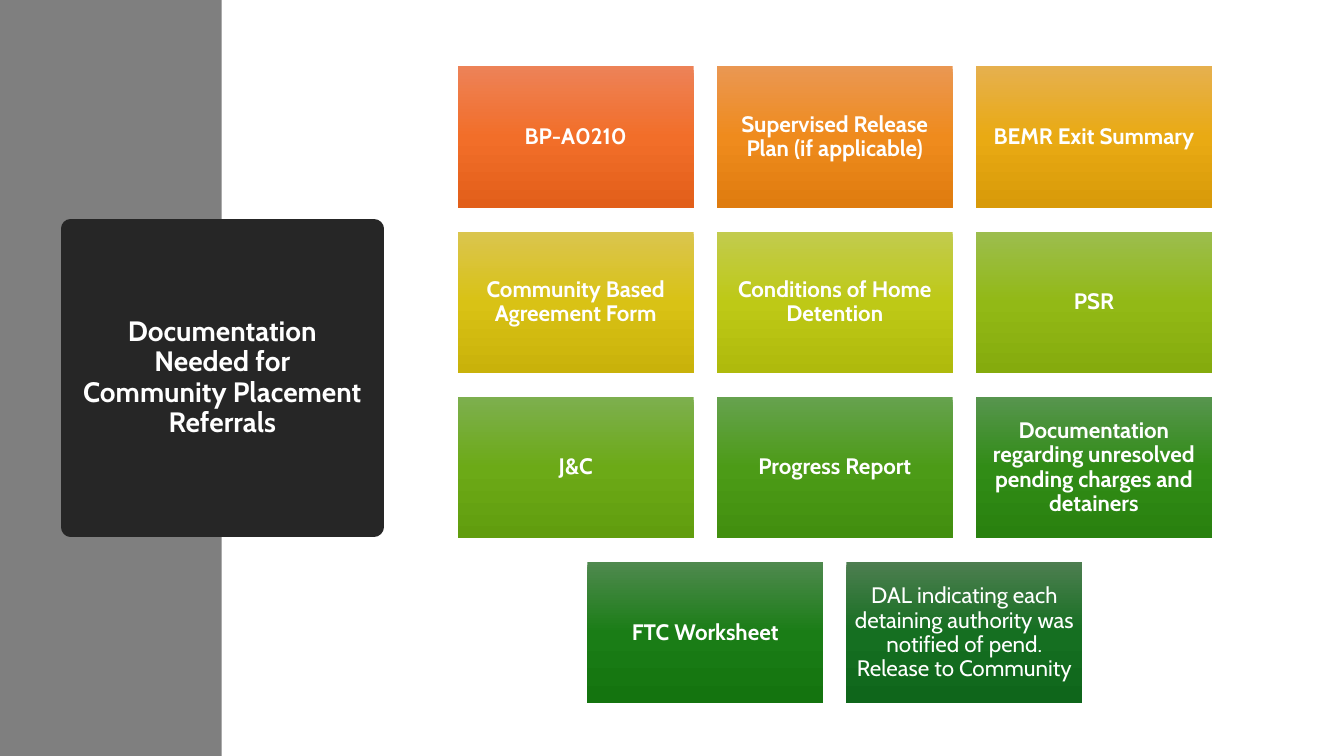
from copy import deepcopy

from pptx import Presentation
from pptx.dml.color import RGBColor
from pptx.enum.shapes import MSO_SHAPE
from pptx.enum.text import MSO_ANCHOR, PP_ALIGN
from pptx.oxml import parse_xml
from pptx.oxml.ns import nsdecls, qn
from pptx.util import Inches, Pt

COLORS = {"band": "7F7F7F", "title": "262626", "text": "FFFFFF"}
FONT = "Cabin"
COLUMNS = 3
TILE_WIDTH, TILE_HEIGHT = 2.34, 1.4
GRID_LEFT, GRID_TOP = 4.54, 0.66
COLUMN_STEP, ROW_STEP = 2.57, 1.64

DOCUMENTS = [
    ("BP-A0210", True, ("ED8257", "F26E29", "E25F1A")),
    ("Supervised Release Plan (if applicable)", True, ("EA9752", "EF8B1D", "DF7C0F")),
    ("BEMR Exit Summary", True, ("E6B04E", "E9AA13", "D89A09")),
    ("Community Based Agreement Form", True, ("DAC54E", "D9C215", "C9B20A")),
    ("Conditions of Home Detention", True, ("C2CB4E", "BEC916", "AFBA0C")),
    ("PSR", True, ("9CBD4E", "92B916", "85AB0D")),
    ("J&C", True, ("7DAF4E", "6CAA17", "619D0E")),
    ("Progress Report", True, ("66A24E", "4C9B17", "428F0F")),
    ("Documentation regarding unresolved pending charges and detainers", True,
     ("57954E", "318C16", "29810F")),
    ("FTC Worksheet", True, ("4F894E", "1A7D16", "14740F")),
    ("DAL indicating each detaining authority was notified of pend. Release to Community",
     False, ("4D7E50", "156F21", "0F661B")),
]


def add_box(left, top, width, height, color):
    box = page.shapes.add_shape(
        MSO_SHAPE.RECTANGLE, Inches(left), Inches(top), Inches(width), Inches(height))
    box.shadow.inherit = False
    box.fill.solid()
    box.fill.fore_color.rgb = RGBColor.from_string(color)
    box.line.fill.background()
    return box


def write_text(box, text, size, bold, inset):
    frame = box.text_frame
    frame.text = text
    frame.word_wrap = True
    frame.vertical_anchor = MSO_ANCHOR.MIDDLE
    frame.margin_left = frame.margin_right = Inches(inset)
    frame.margin_top = frame.margin_bottom = Inches(inset)
    para = frame.paragraphs[0]
    para.alignment = PP_ALIGN.CENTER
    para.line_spacing = 0.9
    font = para.runs[0].font
    font.name = FONT
    font.size = Pt(size)
    font.bold = bold
    font.color.rgb = RGBColor.from_string(COLORS["text"])


deck = Presentation()
deck.slide_width = Inches(13.33)
deck.slide_height = Inches(7.5)
page = deck.slides.add_slide(deck.slide_layouts[6])

add_box(0, 0, 2.2, 7.5, COLORS["band"])

title = add_box(0.7, 2.27, 3.01, 2.96, COLORS["title"])
title.line.color.rgb = RGBColor.from_string(COLORS["title"])
title.line.width = Pt(13.75)
title.line.fill._xPr.append(parse_xml(f"<a:round {nsdecls('a')}/>"))
write_text(title, "Documentation Needed for Community Placement Referrals", 20, True, 0.1)

for index, (text, bold, shades) in enumerate(DOCUMENTS):
    row, column = divmod(index, COLUMNS)
    tiles_in_row = min(COLUMNS, len(DOCUMENTS) - row * COLUMNS)
    indent = (COLUMNS - tiles_in_row) * COLUMN_STEP / 2
    tile = add_box(GRID_LEFT + indent + column * COLUMN_STEP, GRID_TOP + row * ROW_STEP,
                   TILE_WIDTH, TILE_HEIGHT, shades[0])
    tile.fill.gradient()
    tile.fill.gradient_angle = 270
    stop_list = tile._element.spPr.find(qn("a:gradFill")).find(qn("a:gsLst"))
    stop_list.append(deepcopy(stop_list[0]))
    for stop, position, shade in zip(tile.fill.gradient_stops, (0, 0.5, 1), shades):
        stop.position = position
        stop.color.rgb = RGBColor.from_string(shade)
    write_text(tile, text, 16, bold, 0.07)

deck.save("out.pptx")
